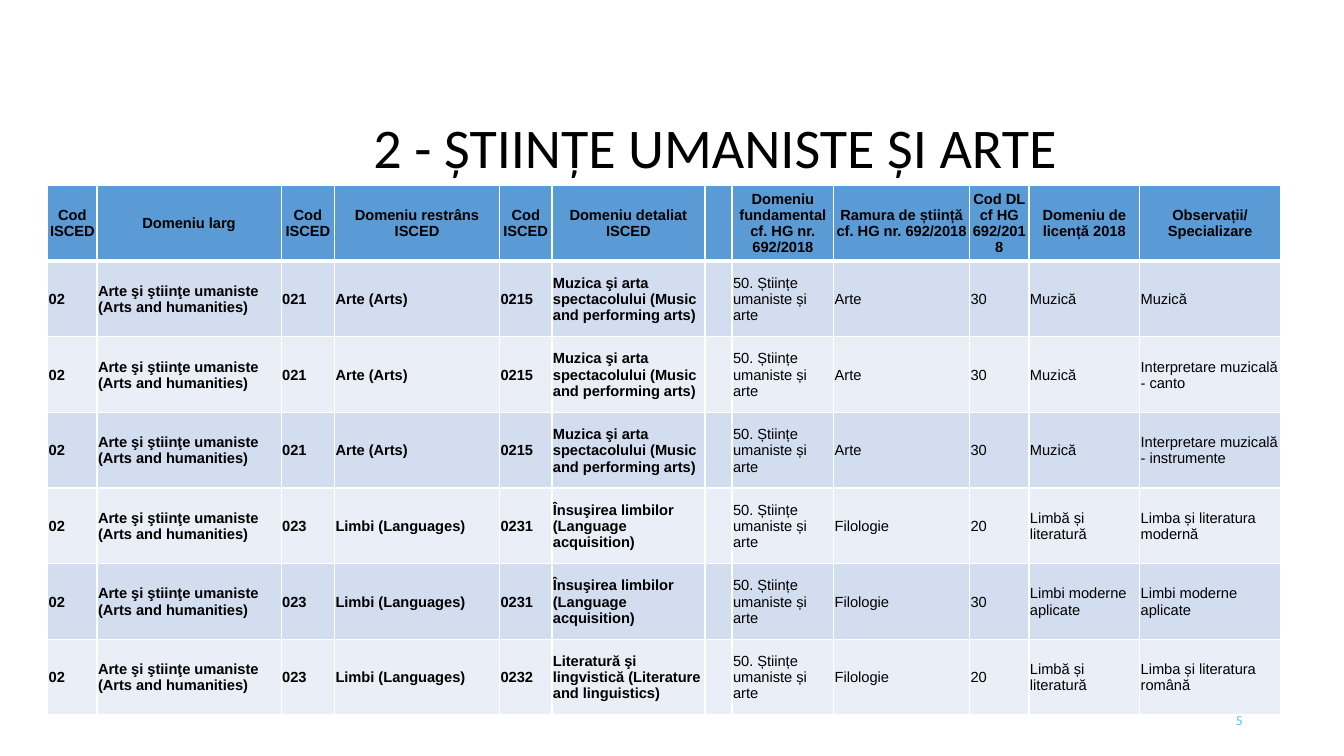
import pptx
import pptx.dml.color
import pptx.enum.text
import pptx.oxml
import pptx.oxml.ns
import pptx.util

WIDTH, HEIGHT = pptx.util.Inches(13.33), pptx.util.Inches(7.5)
COLORS = {
    "text": "000000",
    "header": "5B9BD5",
    "odd_row": "D2DEEF",
    "even_row": "EAEFF7",
    "border": "FFFFFF",
    "number": "5FCBEF",
}
ALIGN = pptx.enum.text.PP_ALIGN
MIDDLE = pptx.enum.text.MSO_ANCHOR.MIDDLE

COLUMN_WIDTHS = [0.49, 1.83, 0.53, 1.64, 0.52, 1.52, 0.27, 1.01, 1.35, 0.59, 1.1, 1.4]
BOLD_COLUMNS = 6
HEADINGS = [
    "Cod ISCED", "Domeniu larg", "Cod ISCED", "Domeniu restrâns ISCED",
    "Cod ISCED", "Domeniu detaliat ISCED", "",
    "Domeniu fundamental cf. HG nr. 692/2018",
    "Ramura de știință cf. HG nr. 692/2018", "Cod DL cf HG 692/2018",
    "Domeniu de licență 2018", "Observații/ Specializare",
]
BROAD_FIELD = ["02", "Arte şi ştiinţe umaniste (Arts and humanities)"]
ARTS = ["021", "Arte (Arts)"]
LANGUAGES = ["023", "Limbi (Languages)"]
MUSIC = ARTS + ["0215", "Muzica şi arta spectacolului (Music and performing arts)"]
ACQUISITION = LANGUAGES + ["0231", "Însuşirea limbilor (Language acquisition)"]
LITERATURE = LANGUAGES + ["0232", "Literatură şi lingvistică (Literature and linguistics)"]
FUNDAMENTAL_FIELD = ["", "50. Științe umaniste și arte"]
# ISCED fields, then branch, licence code, licence field and specialization
PROGRAMMES = [
    (MUSIC, ["Arte", "30", "Muzică", "Muzică"]),
    (MUSIC, ["Arte", "30", "Muzică", "Interpretare muzicală - canto"]),
    (MUSIC, ["Arte", "30", "Muzică", "Interpretare muzicală - instrumente"]),
    (ACQUISITION, ["Filologie", "20", "Limbă și literatură", "Limba și literatura modernă"]),
    (ACQUISITION, ["Filologie", "30", "Limbi moderne aplicate", "Limbi moderne aplicate"]),
    (LITERATURE, ["Filologie", "20", "Limbă și literatură", "Limba și literatura română"]),
]


def share_box(left, top, width, height):
    """Turn shares of the slide's size into lengths."""
    return [round(share * size) for share, size in
            zip((left, top, width, height), (WIDTH, HEIGHT, WIDTH, HEIGHT))]


def add_run(paragraph, text, font, size, color, alignment, bold=False):
    paragraph.alignment = alignment
    run = paragraph.add_run()
    run.text = text
    run.font.name = font
    run.font.size = pptx.util.Pt(size)
    run.font.bold = bold
    run.font.color.rgb = pptx.dml.color.RGBColor.from_string(COLORS[color])


def set_borders(cell, **points):
    """Draw cell borders; the sides L, R, T and B default to 1 pt."""
    properties = cell._tc.get_or_add_tcPr()
    for index, side in enumerate("LRTB"):
        line_width = pptx.util.Pt(points.get(side, 1))
        properties.insert(index, pptx.oxml.parse_xml(
            f'<a:ln{side} {pptx.oxml.ns.nsdecls("a")} w="{line_width}"><a:solidFill>'
            f'<a:srgbClr val="{COLORS["border"]}"/></a:solidFill></a:ln{side}>'))


def fill_cell(cell, text, row, column):
    is_header = row == 0
    color = "header" if is_header else "odd_row" if row % 2 else "even_row"
    cell.fill.solid()
    cell.fill.fore_color.rgb = pptx.dml.color.RGBColor.from_string(COLORS[color])
    set_borders(cell, **({"B": 3} if is_header else {"T": 3} if row == 1 else {}))
    cell.vertical_anchor = MIDDLE
    margin = pptx.util.Inches(0 if is_header else 0.01)
    cell.margin_left = cell.margin_right = cell.margin_top = margin
    cell.margin_bottom = 0
    if text:
        add_run(cell.text_frame.paragraphs[0], text, "Arial", 10.5, "text",
                ALIGN.CENTER if is_header else ALIGN.LEFT,
                is_header or column < BOLD_COLUMNS)


def add_programme_table(slide, box):
    rows = [HEADINGS] + [BROAD_FIELD + isced + FUNDAMENTAL_FIELD + licence
                         for isced, licence in PROGRAMMES]
    table = slide.shapes.add_table(len(rows), len(HEADINGS), *box).table
    for column, width in zip(table.columns, COLUMN_WIDTHS):
        column.width = round(box[2] * width / sum(COLUMN_WIDTHS))
    for row, texts in enumerate(rows):
        for column, text in enumerate(texts):
            fill_cell(table.cell(row, column), text, row, column)


def set_title(slide, box):
    title = slide.shapes.title
    title.left, title.top, title.width, title.height = box
    frame = title.text_frame
    frame.auto_size = pptx.enum.text.MSO_AUTO_SIZE.NONE
    frame.vertical_anchor = MIDDLE
    paragraph = frame.paragraphs[0]
    paragraph.line_spacing = 0.9
    add_run(paragraph, "2 - ȘTIINȚE UMANISTE ȘI ARTE", "Calibri", 40, "text", ALIGN.CENTER)


def add_page_number(slide, box):
    frame = slide.shapes.add_textbox(*box).text_frame
    frame.word_wrap = True
    frame.vertical_anchor = MIDDLE
    add_run(frame.paragraphs[0], "5", "Cabin", 9, "number", ALIGN.RIGHT)


def main():
    presentation = pptx.Presentation()
    presentation.slide_width, presentation.slide_height = WIDTH, HEIGHT
    title_only = presentation.slide_layouts[5]
    slide = presentation.slides.add_slide(title_only)
    add_programme_table(slide, share_box(0.0355, 0.2455, 0.9175, 0.7))
    add_page_number(slide, share_box(0.707, 0.927, 0.225, 0.053))
    set_title(slide, share_box(0.1005, 0.151, 0.863, 0.096))
    presentation.save("out.pptx")


if __name__ == "__main__":
    main()
